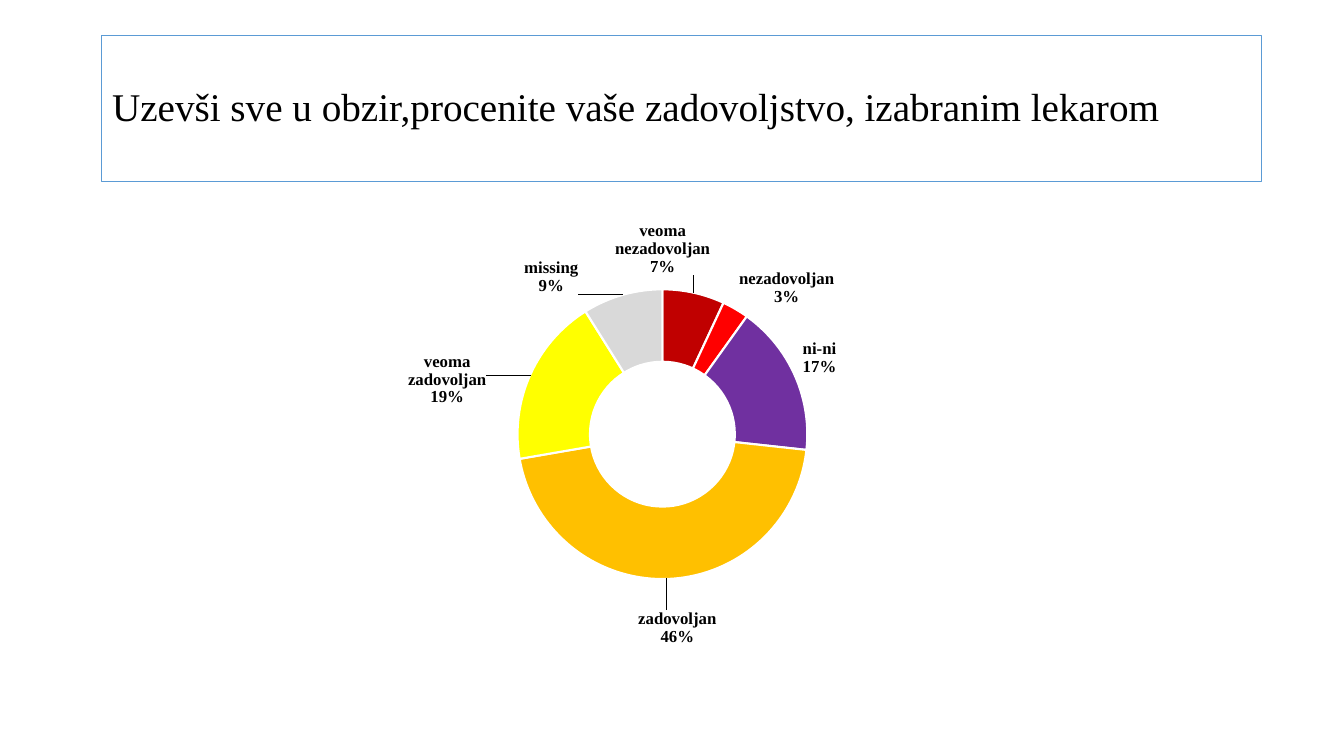
import dataclasses

import lxml.etree
import pptx
import pptx.chart.chart
import pptx.chart.data
import pptx.dml.color
import pptx.enum.chart
import pptx.enum.text
import pptx.oxml
import pptx.oxml.ns
import pptx.slide
import pptx.util
from pptx.util import Cm

FONT = "Times New Roman"


@dataclasses.dataclass
class Answer:
    name: str
    percent: int
    color: str
    dx: float  # label offset, as a share of the chart's width
    dy: float  # label offset, as a share of the chart's height


ANSWERS = [
    Answer("veoma nezadovoljan", 7, "C00000", -0.02, -0.15),
    Answer("nezadovoljan", 3, "FF0000", 0.06, -0.1),
    Answer("ni-ni", 17, "7030A0", 0.05, -0.06),
    Answer("zadovoljan", 46, "FFC000", 0.01, 0.16),
    Answer("veoma zadovoljan", 19, "FFFF00", -0.1, -0.02),
    Answer("missing", 9, "D9D9D9", -0.07, -0.1),
]


def rgb(color: str) -> pptx.dml.color.RGBColor:
    return pptx.dml.color.RGBColor.from_string(color)


def set_font(font, size: float, bold: bool = False) -> None:
    font.name = FONT
    font.size = pptx.util.Pt(size)
    font.bold = bold
    font.color.rgb = rgb("000000")


def manual_layout(**values: object) -> lxml.etree._Element:
    """Return a chart layout element; keyword order follows the schema."""
    items = "".join(f'<c:{key} val="{val}"/>' for key, val in values.items())
    return pptx.oxml.parse_xml(
        f'<c:layout {pptx.oxml.ns.nsdecls("c")}>'
        f"<c:manualLayout>{items}</c:manualLayout></c:layout>"
    )


def add_title(s: pptx.slide.Slide, text: str) -> None:
    sp = s.shapes.title
    sp.left, sp.top, sp.width, sp.height = Cm(2.57), Cm(0.89), Cm(29.21), Cm(3.68)
    sp.line.color.rgb = rgb("5B9BD5")
    sp.line.width = pptx.util.Pt(0.75)
    tf = sp.text_frame
    tf.text = text
    tf.word_wrap = True
    tf.vertical_anchor = pptx.enum.text.MSO_ANCHOR.MIDDLE
    p = tf.paragraphs[0]
    p.alignment = pptx.enum.text.PP_ALIGN.LEFT
    p.line_spacing = 0.9
    set_font(p.runs[0].font, 28)


def format_labels(series) -> None:
    """Show category and percent on each slice, moved outside the ring."""
    labels = series.data_labels
    labels.show_value = False
    labels.show_category_name = True
    labels.show_percentage = True
    set_font(labels.font, 12, bold=True)
    for i in range(len(ANSWERS)):
        set_font(series.points[i].data_label.font, 12, bold=True)
    for label, answer in zip(series._element.xpath(".//c:dLbl"), ANSWERS):
        label.xpath("c:idx")[0].addnext(manual_layout(x=answer.dx, y=answer.dy))
        for tag, val in (("showVal", "0"), ("showCatName", "1"), ("showPercent", "1")):
            label.xpath(f"c:{tag}")[0].set("val", val)
        separator = lxml.etree.SubElement(label, pptx.oxml.ns.qn("c:separator"))
        separator.text = "\n"


def add_doughnut(s: pptx.slide.Slide) -> None:
    data = pptx.chart.data.CategoryChartData()
    data.categories = [a.name for a in ANSWERS]
    data.add_series("Series 1", [a.percent for a in ANSWERS])
    chart = s.shapes.add_chart(
        pptx.enum.chart.XL_CHART_TYPE.DOUGHNUT,
        Cm(2.82), Cm(4.93), Cm(29.21), Cm(13.36), data,
    ).chart
    chart.has_title = False
    chart.has_legend = False
    chart.font.name = "Calibri"
    chart.font.size = pptx.util.Pt(10)

    plot = chart.plots[0]
    plot.vary_by_categories = True
    series = plot.series[0]
    for i, answer in enumerate(ANSWERS):
        fmt = series.points[i].format
        fmt.fill.solid()
        fmt.fill.fore_color.rgb = rgb(answer.color)
        fmt.line.color.rgb = rgb("FFFFFF")
        fmt.line.width = pptx.util.Pt(1.5)
    format_labels(series)

    area = chart._chartSpace.xpath(".//c:plotArea")[0]
    for layout in area.xpath("c:layout"):
        area.remove(layout)
    area.insert(0, manual_layout(
        layoutTarget="inner", xMode="edge", yMode="edge",
        x=0.35, y=0.08, w=0.25, h=0.74,
    ))
    area.xpath(".//c:holeSize")[0].set("val", "48")


def main() -> None:
    prs = pptx.Presentation()
    prs.slide_width, prs.slide_height = Cm(33.87), Cm(19.05)
    s = prs.slides.add_slide(prs.slide_layouts.get_by_name("Title Only"))
    add_title(s, "Uzevši sve u obzir,procenite vaše zadovoljstvo, izabranim lekarom")
    add_doughnut(s)
    prs.save("out.pptx")


if __name__ == "__main__":
    main()
